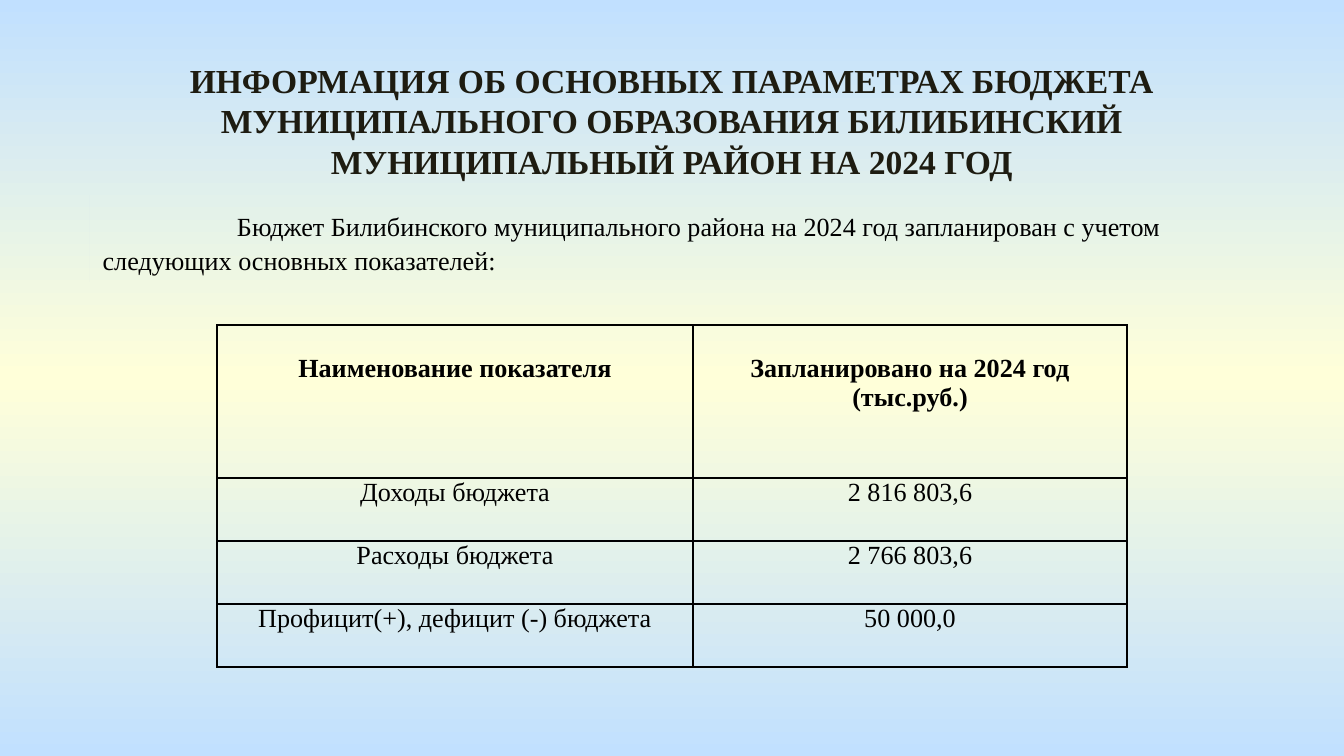
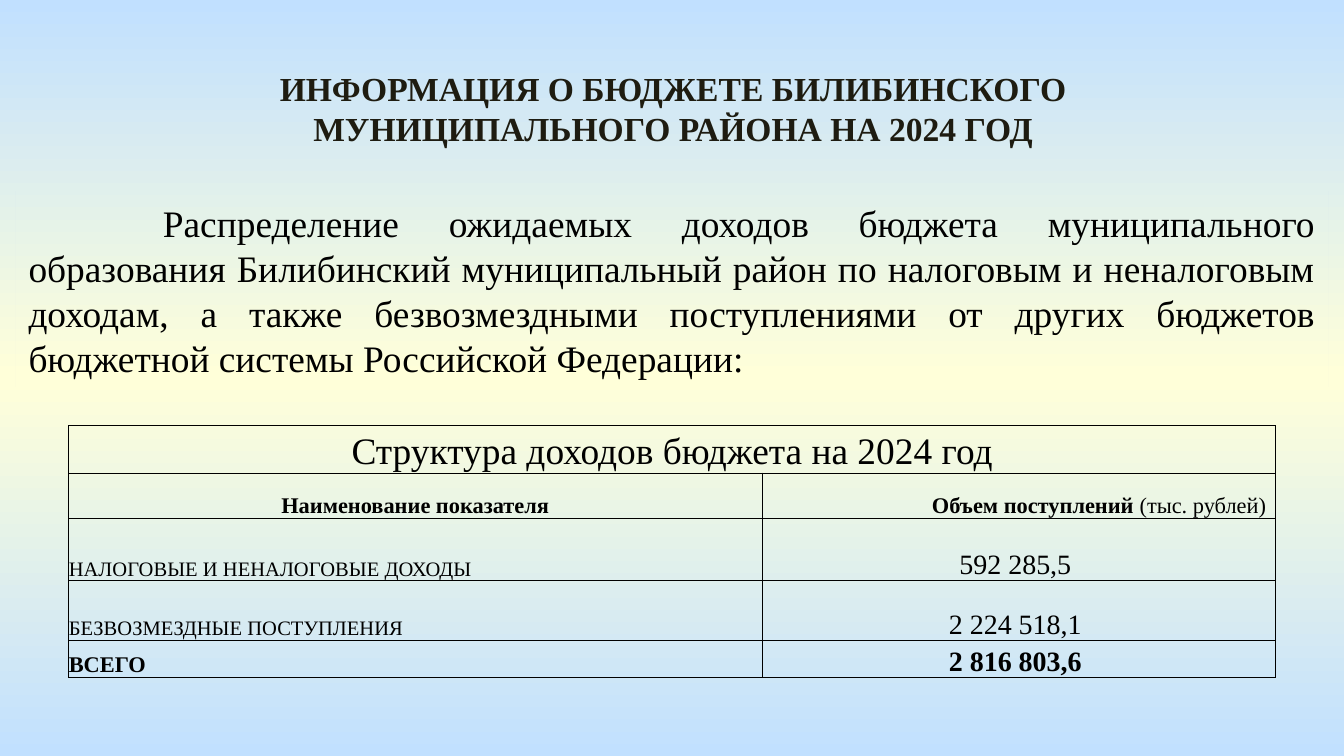
"""Builds two slides on the 2024 budget of the Bilibino municipal district."""
from copy import deepcopy

from lxml.etree import SubElement
from pptx import Presentation
from pptx.dml.color import RGBColor
from pptx.enum.shapes import MSO_SHAPE as ShapeKind
from pptx.enum.text import MSO_ANCHOR as Anchor, MSO_AUTO_SIZE as AutoSize, PP_ALIGN as Align
from pptx.oxml.ns import qn
from pptx.util import Cm, Pt

FONT = "Times New Roman"
COLORS = {"sky": "C1E0FF", "cream": "FFFFD9", "title": "1E1C11", "text": "000000"}
BACKGROUND_STOPS = [(0, "sky"), (0.5, "cream"), (1, "sky")]
TITLE_SIZE = 18
FIRST_LINE_INDENT = Cm(2.54)


def centered(text, size, bold=False):
    return {"runs": [(text, size, bold)], "align": Align.CENTER}


def label(text, size, bold=False):
    return {"runs": [(text, size, bold)], "align": Align.LEFT}


PARAMETERS = [
    ("Доходы бюджета", "2 816 803,6"),
    ("Расходы бюджета", "2 766 803,6"),
    ("Профицит(+), дефицит (-) бюджета", "50 000,0"),
]
INCOME = [
    ("НАЛОГОВЫЕ И НЕНАЛОГОВЫЕ ДОХОДЫ", "592 285,5 "),
    ("БЕЗВОЗМЕЗДНЫЕ ПОСТУПЛЕНИЯ", "2 224 518,1 "),
]

SLIDES = [
    {
        "title": "ИНФОРМАЦИЯ ОБ ОСНОВНЫХ ПАРАМЕТРАХ БЮДЖЕТА МУНИЦИПАЛЬНОГО "
                 "ОБРАЗОВАНИЯ БИЛИБИНСКИЙ МУНИЦИПАЛЬНЫЙ РАЙОН НА 2024 ГОД",
        "title_box": (0.89, 0.99, 23.62, 2.57),
        "intro": "Бюджет Билибинского муниципального района на 2024 год запланирован "
                 "с учетом следующих основных показателей:",
        "intro_box": (1.69, 3.7, 22.2, 1.63),
        "intro_style": {"size": 14, "align": Align.LEFT, "spacing": 1.07},
        "table": {
            "corner": (4.1, 6.14),
            "columns": [9, 8.2],
            "rows": [2.9, 1.19, 1.19, 1.19],
            "border": 1,
            "anchor": Anchor.TOP,
            "side_margin": 0.18,
            "header_margin": 0.55,
            "cells": [
                [centered("Наименование показателя", 14, True),
                 centered("Запланировано на 2024 год (тыс.руб.)", 14, True)],
                *[[centered(text, 14) for text in row] for row in PARAMETERS],
            ],
        },
    },
    {
        "title": "ИНФОРМАЦИЯ О БЮДЖЕТЕ БИЛИБИНСКОГО МУНИЦИПАЛЬНОГО РАЙОНА НА 2024 ГОД",
        "title_box": (2.91, 1.14, 19.63, 1.8),
        "intro": "Распределение ожидаемых доходов бюджета муниципального образования "
                 "Билибинский муниципальный район по налоговым и неналоговым доходам, "
                 "а также безвозмездными поступлениями от других бюджетов бюджетной "
                 "системы Российской Федерации:",
        "intro_box": (0.29, 3.62, 24.82, 3.68),
        "intro_style": {"size": 20, "align": Align.JUSTIFY, "spacing": 1},
        "table": {
            "corner": (1.3, 8.05),
            "columns": [13.1, 9.71],
            "rows": [0.89, 0.86, 1.18, 1.12, 0.71],
            "border": 0.5,
            "anchor": Anchor.BOTTOM,
            "side_margin": 0,
            "header_margin": 0,
            "cells": [
                [centered("Структура доходов бюджета на 2024 год", 20)],
                [centered("Наименование показателя", 12, True),
                 {"runs": [("Объем поступлений ", 12, True), ("(тыс. рублей)", 12, False)],
                  "align": Align.RIGHT, "side_margin": 0.18}],
                *[[label(name, 11), centered(value, 15)] for name, value in INCOME],
                [label("ВСЕГО", 12, True), centered("2 816 803,6 ", 15, True)],
            ],
        },
    },
]


def paint_background(master):
    fill = master.background.fill
    fill.gradient()
    fill.gradient_angle = 270
    stop_list = master.element.find(".//" + qn("a:gsLst"))
    stop_list.append(deepcopy(stop_list[0]))
    for stop, (position, color) in zip(fill.gradient_stops, BACKGROUND_STOPS):
        stop.position = position
        stop.color.rgb = RGBColor.from_string(COLORS[color])


def write(paragraph, runs, align, color="text"):
    paragraph.alignment = align
    for text, size, bold in runs:
        run = paragraph.add_run()
        run.text = text
        run.font.name = FONT
        run.font.size = Pt(size)
        run.font.bold = bold
        run.font.color.rgb = RGBColor.from_string(COLORS[color])


def prepare_text(shape, anchor):
    frame = shape.text_frame
    frame.auto_size = AutoSize.NONE
    frame.word_wrap = True
    frame.vertical_anchor = anchor
    return frame.paragraphs[0]


def write_title(slide, text, box):
    title = slide.shapes.title
    title.left, title.top, title.width, title.height = map(Cm, box)
    paragraph = prepare_text(title, Anchor.MIDDLE)
    write(paragraph, [(text, TITLE_SIZE, True)], Align.CENTER, "title")


def add_intro(slide, text, box, style):
    intro = slide.shapes.add_shape(ShapeKind.RECTANGLE, *map(Cm, box))
    intro.shadow.inherit = False
    intro.line.fill.background()
    intro.element.set("useBgFill", "1")
    paragraph = prepare_text(intro, Anchor.BOTTOM)
    paragraph.line_spacing = float(style["spacing"])
    write(paragraph, [(text, style["size"], False)], style["align"])
    paragraph._p.get_or_add_pPr().set("indent", str(FIRST_LINE_INDENT))


def draw_borders(cell, width):
    properties = cell._tc.get_or_add_tcPr()
    for side in ("lnL", "lnR", "lnT", "lnB"):
        line = SubElement(properties, qn("a:" + side), w=str(Pt(width)))
        solid = SubElement(line, qn("a:solidFill"))
        SubElement(solid, qn("a:srgbClr"), val=COLORS["text"])


def add_budget_table(slide, content):
    columns, rows = content["columns"], content["rows"]
    size = (sum(columns), sum(rows))
    frame = slide.shapes.add_table(len(rows), len(columns), *map(Cm, content["corner"] + size))
    table = frame.table
    table.first_row = table.horz_banding = False
    for column, width in zip(table.columns, columns):
        column.width = Cm(width)
    for row, height in zip(table.rows, rows):
        row.height = Cm(height)
    for cell in table.iter_cells():
        cell.margin_top = cell.margin_bottom = 0
        cell.margin_left = cell.margin_right = Cm(content["side_margin"])
        cell.vertical_anchor = content["anchor"]
        draw_borders(cell, content["border"])
        cell.fill.background()
    for row_index, row in enumerate(content["cells"]):
        if len(row) < len(columns):
            table.cell(row_index, 0).merge(table.cell(row_index, len(columns) - 1))
        for column_index, entry in enumerate(row):
            cell = table.cell(row_index, column_index)
            if row_index == 0:
                cell.margin_top = Cm(content["header_margin"])
            if "side_margin" in entry:
                cell.margin_left = cell.margin_right = Cm(entry["side_margin"])
            write(cell.text_frame.paragraphs[0], entry["runs"], entry["align"])


def add_budget_slide(presentation, content):
    slide = presentation.slides.add_slide(presentation.slide_layouts[5])
    add_intro(slide, content["intro"], content["intro_box"], content["intro_style"])
    write_title(slide, content["title"], content["title_box"])
    add_budget_table(slide, content["table"])


def main():
    presentation = Presentation()
    presentation.slide_width, presentation.slide_height = Cm(25.4), Cm(14.29)
    paint_background(presentation.slide_master)
    for content in SLIDES:
        add_budget_slide(presentation, content)
    presentation.save("out.pptx")


if __name__ == "__main__":
    main()
